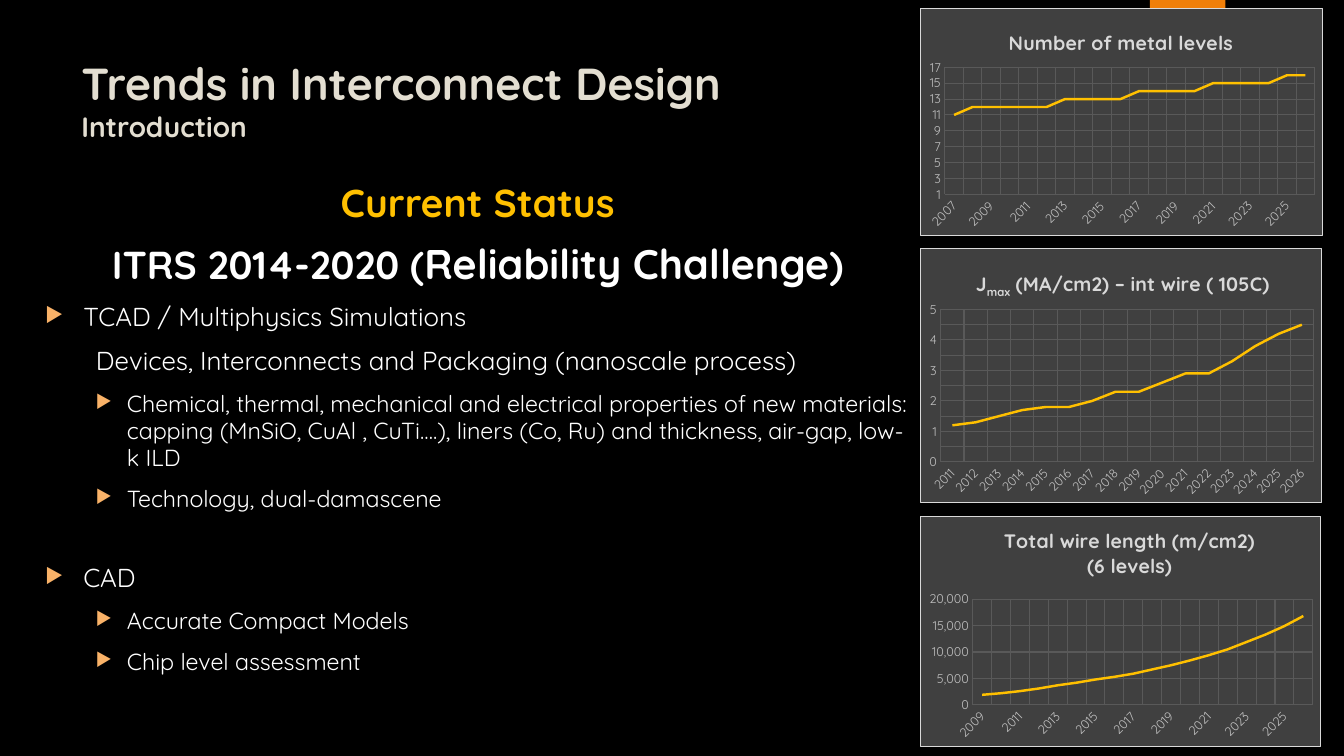
from lxml import etree
from pptx import Presentation
from pptx.chart.data import CategoryChartData
from pptx.dml.color import RGBColor
from pptx.enum.chart import XL_CHART_TYPE as ChartType, XL_MARKER_STYLE as Marker
from pptx.enum.chart import XL_TICK_MARK as TickMark
from pptx.enum.shapes import MSO_SHAPE as Shape
from pptx.enum.text import PP_ALIGN as Align
from pptx.oxml import parse_xml
from pptx.oxml.ns import nsdecls, qn
from pptx.util import Cm, Pt

FONT = "Quicksand"
COLORS = {
    "background": "000000", "tab": "F07F09", "title": "E3DED1", "accent": "FFC000",
    "text": "FFFFFF", "bullet": "F9B268", "panel": "404040", "border": "D9D9D9",
    "grid": "595959", "label": "BFBFBF",
}
TITLE = [("Trends in Interconnect Design", 32), ("Introduction", 20)]
HEADINGS = [
    ([("Current Status", 27.8)], "accent"),
    ([("ITRS 2014-2020 (", 27.8), ("Reliability Challenge", 29.6), (")", 27.8)], "text"),
]
POINTS = [
    ("topic", "TCAD / Multiphysics Simulations", 10),
    ("note", "Devices, Interconnects and Packaging (nanoscale process)", 10),
    ("detail", "Chemical, thermal, mechanical and electrical properties of new materials: "
     "capping (MnSiO, CuAl , CuTi….), liners (Co, Ru) and thickness, air-gap, low-k ILD", 10),
    ("detail", "Technology, dual-damascene", 10),
    ("topic", "CAD", 36),
    ("detail", "Accurate Compact Models", 10),
    ("detail", "Chip level assessment", 10),
]
STYLES = {
    "topic": {"level": 0, "size": 18.5, "margin": 0.96, "hanging": 0.96},
    "note": {"level": 0, "size": 18.5, "margin": 1.28, "hanging": 0},
    "detail": {"level": 1, "size": 16.6, "margin": 2.06, "hanging": 0.79},
}
CHARTS = [
    {"title": [["Number of metal levels"]], "title_at": (0.21, 0.07),
     "box": (0.2, 10.16, 5.74), "plot": (0.06, 0.26, 0.92, 0.56),
     "scale": (1, 17, 2), "format": "General", "label_step": 2, "first_year": 2007,
     "values": [11, 12, 12, 12, 12, 12, 13, 13, 13, 13, 14, 14, 14, 14, 15, 15, 15, 15, 16, 16]},
    {"title": [["J", "max", " (MA/cm2) – int wire ( 105C)"]], "title_at": (0.13, 0.07),
     "box": (6.25, 10.13, 6.43), "plot": (0.05, 0.24, 0.93, 0.6),
     "scale": (0, 5, 1), "minor": 0.5, "format": "General", "label_step": 1, "first_year": 2011,
     "values": [1.2, 1.3, 1.5, 1.7, 1.8, 1.8, 2, 2.3, 2.3, 2.6, 2.9, 2.9, 3.3, 3.8, 4.2, 4.5]},
    {"title": [["Total wire length (m/cm2)"], ["(6 levels)"]], "title_at": (0.2, 0.03),
     "box": (13, 10.11, 5.82), "plot": (0.13, 0.36, 0.85, 0.46),
     "scale": (0, 20000, 5000), "format": "#,##0", "label_step": 2, "first_year": 2009,
     "values": [1900, 2200, 2600, 3100, 3700, 4200, 4800, 5300, 5900, 6700, 7500, 8400,
                9400, 10500, 11900, 13300, 14900, 16800]},
]
CHART_LEFT = 23.19


def color(name):
    return RGBColor.from_string(COLORS[name])


def style_font(font, size, color_name, bold=False):
    font.name, font.size, font.bold = FONT, Pt(size), bold
    font.color.rgb = color(color_name)


def add_text_frame(slide, left, top, width, height):
    text_frame = slide.shapes.add_textbox(Cm(left), Cm(top), Cm(width), Cm(height)).text_frame
    text_frame.word_wrap = True
    return text_frame


def next_paragraph(text_frame, index):
    return text_frame.add_paragraph() if index else text_frame.paragraphs[0]


def add_title(slide):
    text_frame = add_text_frame(slide, 1.8, 1.27, 21, 2.6)
    for index, (text, size) in enumerate(TITLE):
        paragraph = next_paragraph(text_frame, index)
        paragraph.text = text
        style_font(paragraph.runs[0].font, size, "title", True)


def set_bullet(paragraph, margin, hanging):
    properties = paragraph._p.get_or_add_pPr()
    properties.set("marL", str(Cm(margin)))
    properties.set("indent", str(-Cm(hanging)))
    if hanging:
        bullet_color = etree.SubElement(properties, qn("a:buClr"))
        etree.SubElement(bullet_color, qn("a:srgbClr"), val=COLORS["bullet"])
        etree.SubElement(properties, qn("a:buSzPct"), val="80000")
        etree.SubElement(properties, qn("a:buChar"), char="▶")


def add_body(slide):
    text_frame = add_text_frame(slide, 0.89, 4.44, 22.3, 12.95)
    for index, (runs, color_name) in enumerate(HEADINGS):
        paragraph = next_paragraph(text_frame, index)
        paragraph.alignment = Align.CENTER
        paragraph.line_spacing = 0.97
        if index:
            paragraph.space_before = Pt(10)
        for text, size in runs:
            run = paragraph.add_run()
            run.text = text
            style_font(run.font, size, color_name, True)
    for style_name, text, space_before in POINTS:
        style = STYLES[style_name]
        paragraph = text_frame.add_paragraph()
        paragraph.text = text
        paragraph.level = style["level"]
        paragraph.line_spacing = 0.97
        paragraph.space_before = Pt(space_before)
        set_bullet(paragraph, style["margin"], style["hanging"])
        style_font(paragraph.runs[0].font, style["size"], "text")


def layout_xml(position, inner=False):
    target = '<c:layoutTarget val="inner"/>' if inner else ""
    modes = "".join(f'<c:{key}Mode val="edge"/>' for key in "xy")
    values = "".join(f'<c:{key} val="{value}"/>' for key, value in zip("xywh", position))
    return parse_xml(f'<c:layout {nsdecls("c")}><c:manualLayout>{target}{modes}{values}'
                     '</c:manualLayout></c:layout>')


def line_xml(color_name):
    return (f'<a:ln w="{int(Pt(0.75))}"><a:solidFill><a:srgbClr val="{COLORS[color_name]}"/>'
            '</a:solidFill></a:ln>')


def set_chart_title(chart, lines, position):
    chart.has_title = True
    title = chart.chart_title
    for index, parts in enumerate(lines):
        paragraph = next_paragraph(title.text_frame, index)
        paragraph.alignment = Align.CENTER
        for part_index, text in enumerate(parts):
            run = paragraph.add_run()
            run.text = text
            style_font(run.font, 14, "border", True)
            if part_index % 2:
                run._r.get_or_add_rPr().set("baseline", "-25000")
    for layout in title._element.findall(qn("c:layout")):
        title._element.remove(layout)
    title._element.find(qn("c:tx")).addnext(layout_xml(position))


def style_axes(chart, content):
    category_axis, value_axis = chart.category_axis, chart.value_axis
    for axis in (category_axis, value_axis):
        axis.has_major_gridlines = True
        axis.major_gridlines.format.line.color.rgb = color("grid")
        axis.major_gridlines.format.line.width = Pt(0.75)
        axis.major_tick_mark = axis.minor_tick_mark = TickMark.NONE
        axis.format.line.fill.background()
        style_font(axis.tick_labels.font, 9, "label")
    value_axis.minimum_scale, value_axis.maximum_scale, value_axis.major_unit = content["scale"]
    value_axis.tick_labels.number_format = content["format"]
    value_axis.tick_labels.number_format_is_linked = False
    if "minor" in content:
        value_axis.minor_unit = content["minor"]
        value_axis.has_minor_gridlines = True
        value_axis._element.find(qn("c:minorGridlines")).append(
            parse_xml(f'<c:spPr {nsdecls("c", "a")}>{line_xml("grid")}</c:spPr>'))
    element = category_axis._element
    element.find(qn("c:txPr")).find(qn("a:bodyPr")).set("rot", "-2700000")
    step = content["label_step"]
    element.find(qn("c:noMultiLvlLbl")).addprevious(
        parse_xml(f'<c:tickLblSkip {nsdecls("c")} val="{step}"/>'))


def add_line_chart(slide, content):
    values, first_year = content["values"], content["first_year"]
    data = CategoryChartData()
    data.categories = [str(first_year + offset) for offset in range(len(values))]
    data.add_series("Series 1", values)
    top, width, height = content["box"]
    chart = slide.shapes.add_chart(ChartType.LINE_STACKED, Cm(CHART_LEFT), Cm(top),
                                   Cm(width), Cm(height), data).chart
    style_font(chart.font, 10, "text")
    chart.has_legend = False
    set_chart_title(chart, content["title"], content["title_at"])
    style_axes(chart, content)
    plot = chart.plots[0]
    plot.vary_by_categories = False
    series = plot.series[0]
    series.smooth = False
    series.format.line.color.rgb = color("accent")
    series.format.line.width = Pt(1.75)
    series.marker.style = Marker.NONE
    chart_element = chart._chartSpace.find(qn("c:chart"))
    plot_area = chart_element.find(qn("c:plotArea"))
    for layout in plot_area.findall(qn("c:layout")):
        plot_area.remove(layout)
    plot_area.insert(0, layout_xml(content["plot"], inner=True))
    chart_element.addnext(parse_xml(
        f'<c:spPr {nsdecls("c", "a")}><a:solidFill><a:srgbClr val="{COLORS["panel"]}"/>'
        f'</a:solidFill>{line_xml("border")}</c:spPr>'))


def main():
    """Build the interconnect trends slide and save it."""
    presentation = Presentation()
    presentation.slide_width, presentation.slide_height = Cm(33.87), Cm(19.05)
    slide = presentation.slides.add_slide(presentation.slide_layouts[6])
    slide.background.fill.solid()
    slide.background.fill.fore_color.rgb = color("background")
    tab = slide.shapes.add_shape(Shape.RECTANGLE, Cm(28.98), Cm(0), Cm(1.9), Cm(3.17))
    tab.shadow.inherit = False
    tab.fill.solid()
    tab.fill.fore_color.rgb = color("tab")
    tab.line.fill.background()
    add_title(slide)
    add_body(slide)
    for content in CHARTS:
        add_line_chart(slide, content)
    presentation.save("out.pptx")


if __name__ == "__main__":
    main()
